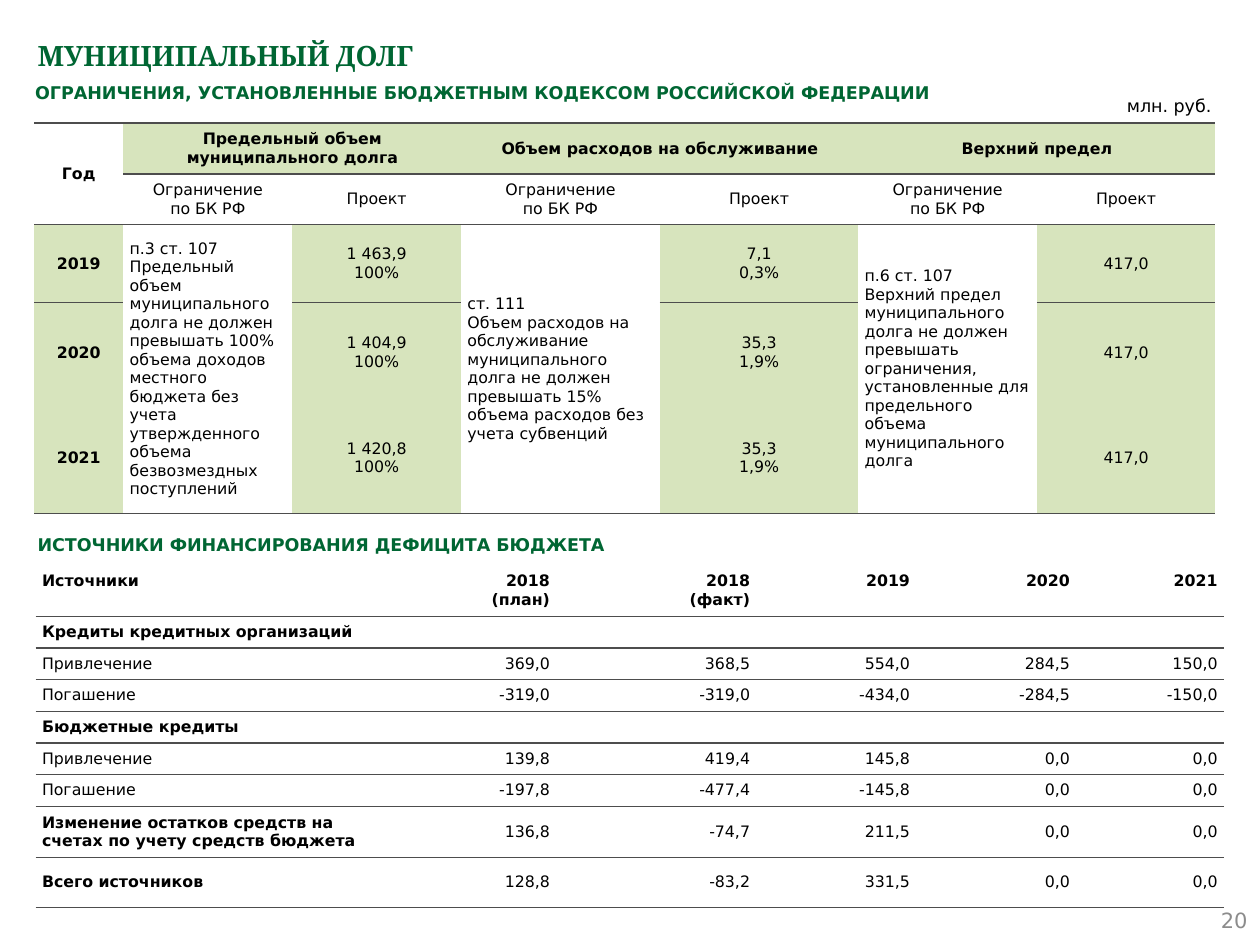
from lxml import etree
from pptx import Presentation
from pptx.dml.color import RGBColor
from pptx.enum import shapes, text
from pptx.oxml.ns import qn
from pptx.util import Pt

GREEN = RGBColor(0x00, 0x66, 0x33)
LIGHT_GREEN = RGBColor(0xD7, 0xE4, 0xBD)
RULE_GREY = RGBColor(0x4D, 0x4D, 0x4D)
PAGE_GREY = RGBColor(0x8C, 0x8C, 0x8C)
BLACK = RGBColor(0, 0, 0)
BODY_FONT = "DejaVu Sans"
NO_STYLE = "{2D5ABB26-0587-4C30-8999-92F81FD0307C}"
LEFT, CENTER, RIGHT = text.PP_ALIGN.LEFT, text.PP_ALIGN.CENTER, text.PP_ALIGN.RIGHT
TOP, MIDDLE = text.MSO_ANCHOR.TOP, text.MSO_ANCHOR.MIDDLE

LIMIT_COLUMNS = [51, 96.5, 96.5, 113.5, 113.5, 102, 102]
LIMIT_ROWS = [29, 29, 44.6, 57, 63.4]
LIMIT_GROUPS = ["Предельный объем муниципального долга",
                "Объем расходов на обслуживание", "Верхний предел"]
LIMIT_RULES = [
    "п.3 ст. 107\nПредельный объем муниципального долга не должен превышать 100% "
    "объема доходов местного бюджета без учета утвержденного объема "
    "безвозмездных поступлений",
    "ст. 111\nОбъем расходов на обслуживание муниципального долга не должен "
    "превышать 15% объема расходов без учета субвенций",
    "п.6 ст. 107\nВерхний предел муниципального долга не должен превышать "
    "ограничения, установленные для предельного объема муниципального долга",
]
LIMIT_VALUES = [
    ("2019", "1 463,9\n100%", "7,1\n0,3%", "417,0"),
    ("2020", "1 404,9\n100%", "35,3\n1,9%", "417,0"),
    ("2021", "1 420,8\n100%", "35,3\n1,9%", "417,0"),
]

SOURCE_COLUMNS = [198, 99.4, 114.4, 91.4, 91.4, 84.4]
SOURCE_ROWS = [28.6, 18, 18, 18, 18, 18, 18.2, 29.2, 28.6]
SOURCES = [
    ("Источники", "2018\n(план)", "2018\n(факт)", "2019", "2020", "2021"),
    ("Кредиты кредитных организаций", "", "", "", "", ""),
    ("Привлечение", "369,0", "368,5", "554,0", "284,5", "150,0"),
    ("Погашение", "-319,0", "-319,0", "-434,0", "-284,5", "-150,0"),
    ("Бюджетные кредиты", "", "", "", "", ""),
    ("Привлечение", "139,8", "419,4", "145,8", "0,0", "0,0"),
    ("Погашение", "-197,8", "-477,4", "-145,8", "0,0", "0,0"),
    ("Изменение остатков средств на счетах по учету средств бюджета",
     "136,8", "-74,7", "211,5", "0,0", "0,0"),
    ("Всего источников", "128,8", "-83,2", "331,5", "0,0", "0,0"),
]
PLAIN_SOURCES = ("Привлечение", "Погашение")


def format_text(frame, size, color, bold=False, align=LEFT, font=BODY_FONT, spacing=None):
    for paragraph in frame.paragraphs:
        paragraph.alignment = align
        if spacing:
            paragraph.line_spacing = spacing
        for run in paragraph.runs:
            run.font.size = Pt(size)
            run.font.name = font
            run.font.bold = bold
            run.font.color.rgb = color
        if not paragraph.runs:  # an empty cell must not stretch its row
            paragraph._p.get_or_add_endParaRPr().set("sz", str(size * 100))


def add_label(slide, box, words, size, color, anchor=TOP, **style):
    shape = slide.shapes.add_textbox(*map(Pt, box))
    shape.text_frame.word_wrap = True
    shape.text_frame.vertical_anchor = anchor
    shape.text_frame.text = words
    format_text(shape.text_frame, size, color, **style)


def add_unit_tag(slide, box):
    shape = slide.shapes.add_shape(shapes.MSO_SHAPE.PENTAGON, *map(Pt, box))
    shape.adjustments[0] = 0
    shape.shadow.inherit = False
    shape.fill.background()
    shape.line.fill.background()
    shape.text_frame.vertical_anchor = MIDDLE
    shape.text_frame.text = "млн. руб."
    format_text(shape.text_frame, 10, BLACK, align=RIGHT)


def add_plain_table(slide, box, columns, rows):
    frame = slide.shapes.add_table(len(rows), len(columns), *map(Pt, box))
    table = frame.table
    table.first_row = table.horz_banding = False
    table._tbl.tblPr.find(qn("a:tableStyleId")).text = NO_STYLE
    for column, width in zip(table.columns, columns):
        column.width = Pt(width)
    for row, height in zip(table.rows, rows):
        row.height = Pt(height)
    return table


def fill_cell(cell, words, bold=False, align=CENTER, anchor=MIDDLE, color=None):
    cell.text = words
    cell.vertical_anchor = anchor
    cell.margin_left = cell.margin_right = Pt(3.6)
    cell.margin_top = cell.margin_bottom = Pt(3.6)
    if color:
        cell.fill.solid()
        cell.fill.fore_color.rgb = color
    else:
        cell.fill.background()
    format_text(cell.text_frame, 9, BLACK, bold, align)


def add_border(cell, tag):
    line = etree.Element(qn(tag), w=str(Pt(1)))
    fill = etree.SubElement(line, qn("a:solidFill"))
    etree.SubElement(fill, qn("a:srgbClr"), val=str(RULE_GREY))
    cell._tc.get_or_add_tcPr().insert(0, line)


def rule_rows(table, ruled_rows, top=False):
    """Draw a line under each ruled row, and above the table if asked."""
    for i in range(len(table.rows)):
        for j in range(len(table.columns)):
            cell = table.cell(i, j)
            last_row = i + (cell.span_height if cell.is_merge_origin else 1) - 1
            if last_row in ruled_rows:
                add_border(cell, "a:lnB")
            if (top and i == 0) or i - 1 in ruled_rows:
                add_border(cell, "a:lnT")


def add_limits_table(slide, box):
    table = add_plain_table(slide, box, LIMIT_COLUMNS, LIMIT_ROWS)
    # Year column
    table.cell(0, 0).merge(table.cell(1, 0))
    fill_cell(table.cell(0, 0), "Год", bold=True)
    # Each group: a heading, a legal limit and the draft values
    for k, (group, limit) in enumerate(zip(LIMIT_GROUPS, LIMIT_RULES)):
        left = 1 + 2 * k
        table.cell(0, left).merge(table.cell(0, left + 1))
        fill_cell(table.cell(0, left), group, bold=True, color=LIGHT_GREEN)
        fill_cell(table.cell(1, left), "Ограничение\nпо БК РФ")
        fill_cell(table.cell(1, left + 1), "Проект")
        table.cell(2, left).merge(table.cell(4, left))
        fill_cell(table.cell(2, left), limit, align=LEFT)
    for i, values in enumerate(LIMIT_VALUES, start=2):
        for k, value in enumerate(values):
            fill_cell(table.cell(i, 2 * k), value, bold=k == 0, color=LIGHT_GREEN)
    rule_rows(table, {0, 1, 4}, top=True)


def add_sources_table(slide, box):
    table = add_plain_table(slide, box, SOURCE_COLUMNS, SOURCE_ROWS)
    for i, values in enumerate(SOURCES):
        for j, value in enumerate(values):
            bold = i == 0 or (j == 0 and value not in PLAIN_SOURCES)
            fill_cell(table.cell(i, j), value, bold,
                      align=RIGHT if j else LEFT, anchor=MIDDLE if i else TOP)
    rule_rows(table, set(range(len(SOURCES))))


def main():
    presentation = Presentation()
    presentation.slide_width, presentation.slide_height = Pt(720), Pt(540)
    slide = presentation.slides.add_slide(presentation.slide_layouts[6])

    # Title and page number
    add_label(slide, (14.4, 14.4, 692, 57), "МУНИЦИПАЛЬНЫЙ ДОЛГ", 16, GREEN,
              bold=True, font="Cambria", spacing=1.2)
    add_label(slide, (552, 511, 168, 29), "20", 12, PAGE_GREY, anchor=MIDDLE, align=RIGHT)

    # Deficit financing sources
    add_label(slide, (14.4, 299.5, 465, 21.6), "ИСТОЧНИКИ ФИНАНСИРОВАНИЯ ДЕФИЦИТА БЮДЖЕТА",
              10, GREEN, bold=True, spacing=1.2)
    add_sources_table(slide, (20.4, 323.4, 679, 194.6))

    # Budget code limits
    add_limits_table(slide, (19.5, 70.4, 675, 223))
    add_label(slide, (13, 41, 539, 21.6),
              "ОГРАНИЧЕНИЯ, УСТАНОВЛЕННЫЕ БЮДЖЕТНЫМ КОДЕКСОМ РОССИЙСКОЙ ФЕДЕРАЦИИ",
              10, GREEN, bold=True, spacing=1.2)
    add_unit_tag(slide, (610, 52.6, 89.3, 15))

    presentation.save("out.pptx")


if __name__ == "__main__":
    main()
